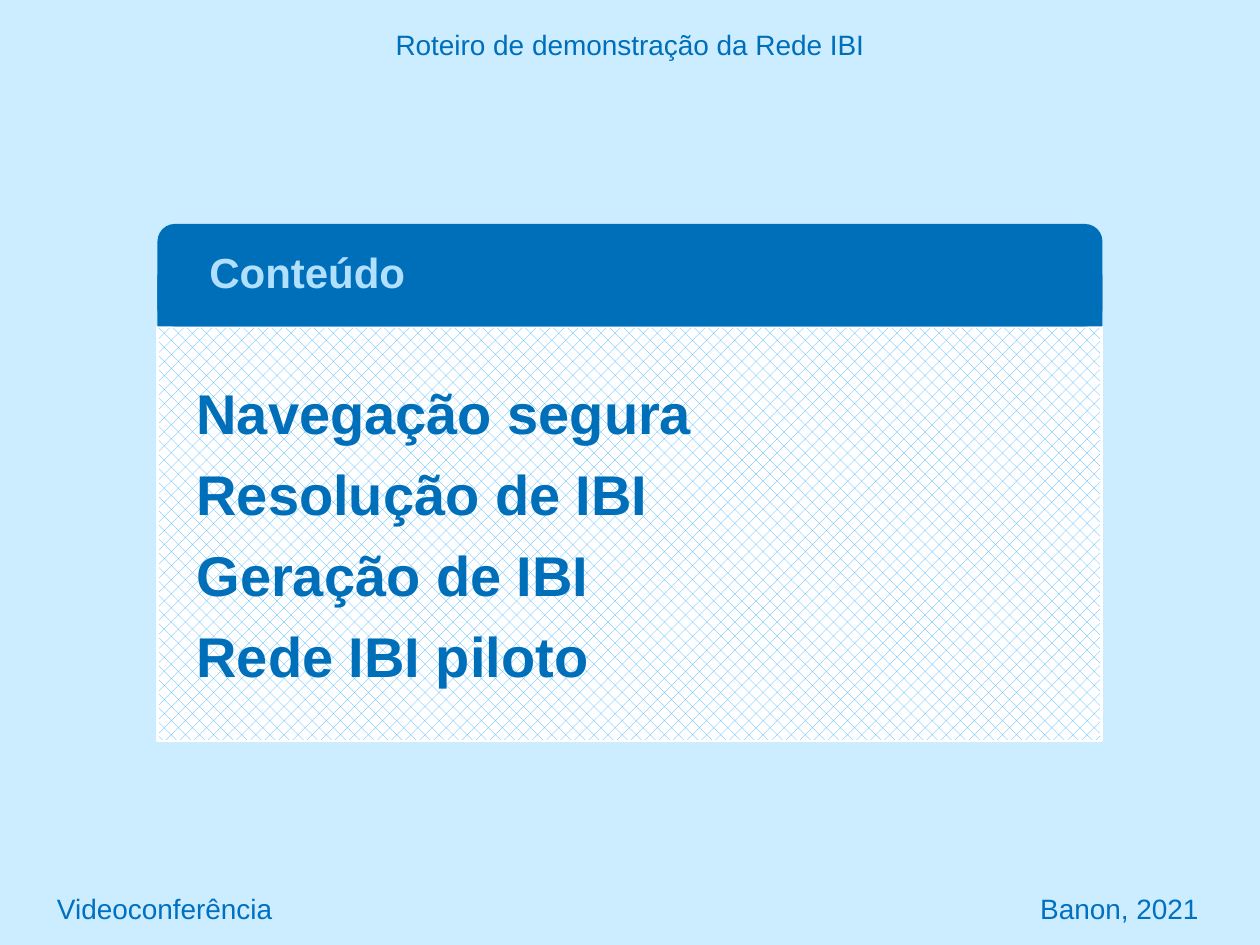
import pptx
import pptx.util
import pptx.dml.color
import pptx.enum.dml
import pptx.enum.shapes
import pptx.enum.text
from dataclasses import dataclass

Pt = pptx.util.Pt
RGB = pptx.dml.color.RGBColor
SHAPE = pptx.enum.shapes.MSO_SHAPE
ALIGN = pptx.enum.text.PP_ALIGN
ANCHOR = pptx.enum.text.MSO_ANCHOR

SKY = RGB(0xCC, 0xEC, 0xFF)
BLUE = RGB(0x00, 0x6F, 0xBA)
FOOTER_BLUE = RGB(0x00, 0x70, 0xC0)
PALE_BLUE = RGB(0xB0, 0xE0, 0xFE)
HATCH_BLUE = RGB(0x3B, 0xB1, 0xFF)
WHITE = RGB(0xFF, 0xFF, 0xFF)

PANEL_LEFT = 90
PANEL_WIDTH = 540
BODY_TOP = 186.5


@dataclass(frozen=True)
class Box:
    left: float
    top: float
    width: float
    height: float

    def lengths(self) -> tuple:
        return Pt(self.left), Pt(self.top), Pt(self.width), Pt(self.height)


@dataclass(frozen=True)
class Style:
    size: float
    color: RGB
    bold: bool = False
    align: ALIGN = ALIGN.LEFT
    anchor: ANCHOR = ANCHOR.TOP
    margin_left: float = 7.2
    space_before: float = 0


@dataclass(frozen=True)
class Label:
    text: str
    box: Box
    style: Style


def write(sp, lines: list[str], style: Style) -> None:
    tf = sp.text_frame
    tf.word_wrap = True
    tf.auto_size = pptx.enum.text.MSO_AUTO_SIZE.NONE
    tf.vertical_anchor = style.anchor
    tf.margin_left, tf.margin_right = Pt(style.margin_left), Pt(7.2)
    tf.margin_top = tf.margin_bottom = Pt(3.6)
    for i, line in enumerate(lines):
        p = tf.add_paragraph() if i else tf.paragraphs[0]
        p.alignment = style.align
        p.space_before = Pt(style.space_before)
        r = p.add_run()
        r.text = line
        r.font.name = "Arial"
        r.font.size = Pt(style.size)
        r.font.bold = style.bold
        r.font.color.rgb = style.color


def add_band(s, kind: SHAPE, box: Box):
    sp = s.shapes.add_shape(kind, *box.lengths())
    sp.shadow.inherit = False
    sp.fill.solid()
    sp.fill.fore_color.rgb = BLUE
    sp.line.fill.background()
    return sp


def add_body(s, box: Box, lines: list[str]) -> None:
    sp = s.shapes.add_shape(SHAPE.RECTANGLE, *box.lengths())
    sp.shadow.inherit = False
    sp.fill.patterned()
    sp.fill.pattern = pptx.enum.dml.MSO_PATTERN.PERCENT_25
    sp.fill.fore_color.rgb = HATCH_BLUE
    sp.fill.back_color.rgb = WHITE
    sp.line.color.rgb = WHITE
    sp.line.width = Pt(1.5)
    write(sp, lines, Style(32, BLUE, True, anchor=ANCHOR.MIDDLE,
                           margin_left=22.3, space_before=8))


def add_label(s, label: Label) -> None:
    sp = s.shapes.add_textbox(*label.box.lengths())
    write(sp, [label.text], label.style)


def main() -> None:
    prs = pptx.Presentation()
    prs.slide_width, prs.slide_height = Pt(720), Pt(540)
    s = prs.slides.add_slide(prs.slide_layouts[5])
    s.background.fill.solid()
    s.background.fill.fore_color.rgb = SKY

    title = s.shapes.title
    title.left, title.top, title.width, title.height = Box(0, 12.2, 720, 26.6).lengths()
    write(title, ["Roteiro de demonstração da Rede IBI"],
          Style(16, BLUE, align=ALIGN.CENTER))

    add_body(s, Box(PANEL_LEFT, BODY_TOP, PANEL_WIDTH - 0.5, 237),
             ["Navegação segura", "Resolução de IBI", "Geração de IBI", "Rede IBI piloto"])
    add_band(s, SHAPE.RECTANGLE, Box(PANEL_LEFT, 157, PANEL_WIDTH, BODY_TOP - 157))
    header = add_band(s, SHAPE.ROUNDED_RECTANGLE,
                      Box(PANEL_LEFT, 128, PANEL_WIDTH, BODY_TOP - 128))
    header.adjustments[0] = 0.17

    footer_left = Style(16, FOOTER_BLUE, anchor=ANCHOR.MIDDLE)
    footer_right = Style(16, FOOTER_BLUE, align=ALIGN.RIGHT, anchor=ANCHOR.MIDDLE)
    labels = [
        Label("Conteúdo", Box(112.5, 137.5, 146, 43), Style(24, PALE_BLUE, True)),
        Label("Videoconferência", Box(25.5, 504, 330, 30), footer_left),
        Label("Banon, 2021", Box(362, 504, 330, 30), footer_right),
    ]
    for label in labels:
        add_label(s, label)

    prs.save("out.pptx")


if __name__ == "__main__":
    main()
